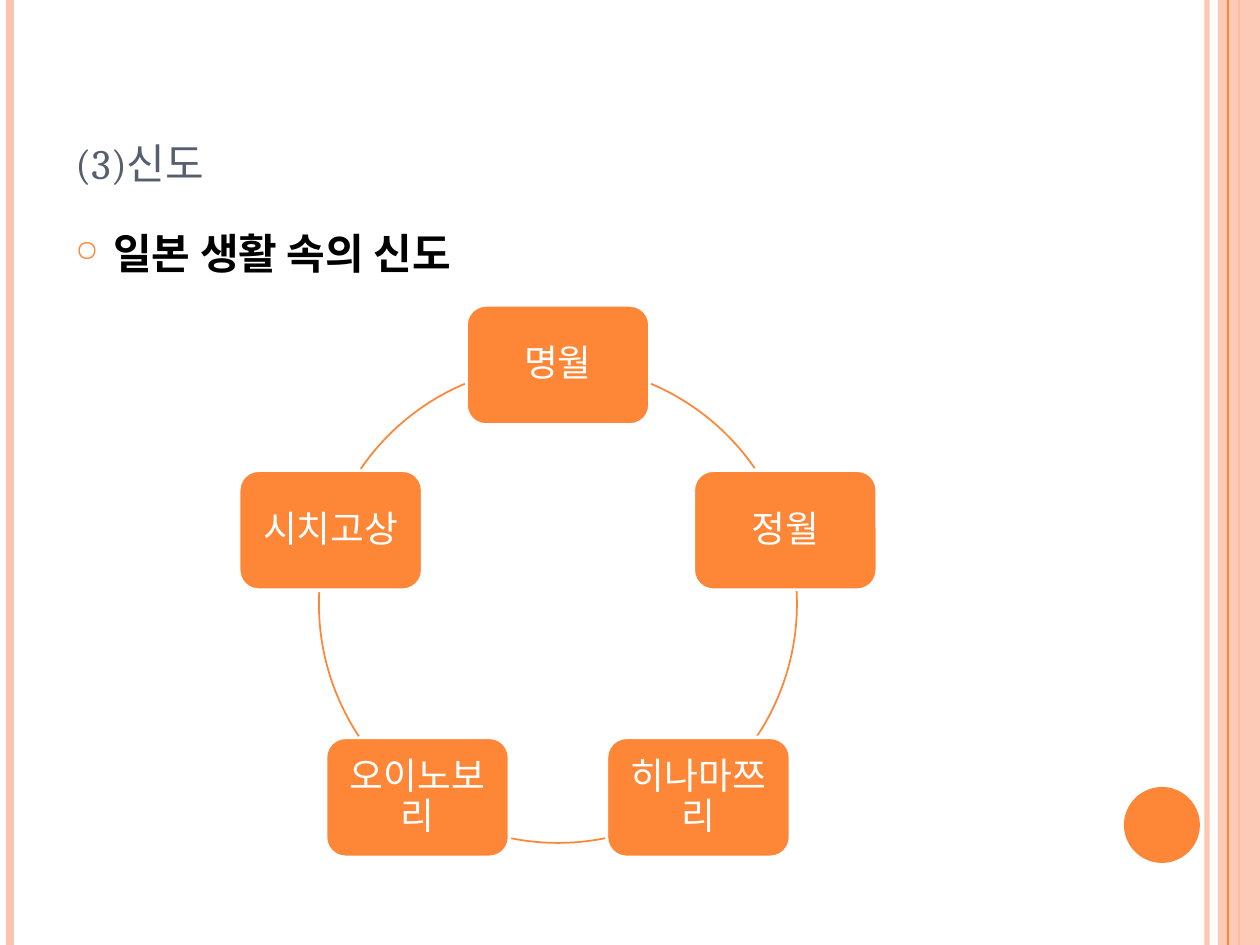
import math

from lxml import etree
from pptx import Presentation, util as u
from pptx.dml.color import RGBColor
from pptx.enum import shapes, text
from pptx.oxml import ns

PX = 914400 / 126
W, H = 1260, 945
FONT = "Cambria"
COLORS = {"orange": "FE8637", "peach": "FEC3AE", "slate": "575F6D",
          "black": "000000", "white": "FFFFFF"}
FESTIVALS = ["명월", "정월", "히나마쯔리", "오이노보리", "시치고상"]
# start and end of the arc that follows each festival, in degrees
ARCS = [(292.9, 325.6), (356.9, 33.6), (78.6, 101.4), (146.4, 183.1), (214.4, 247.1)]


def px(*values):
    return [u.Emu(round(v * PX)) for v in values]


def rgb(name):
    return RGBColor.from_string(COLORS[name])


def add_sub(parent, tag, **attrs):
    return etree.SubElement(parent, ns.qn(tag), attrs)


def set_alpha(sp, percent):
    """Make the only colour set so far on a shape or line translucent."""
    color = next(sp._element.spPr.iter(ns.qn("a:srgbClr")))
    add_sub(color, "a:alpha", val=str(percent * 1000))


def add_run(p, words, size, color, bold=False):
    r = p.add_run()
    r.text = words
    r.font.name, r.font.size, r.font.bold = FONT, u.Pt(size), bold
    r.font.color.rgb = rgb(color)
    return r


def add_shape(s, kind, box, fill=None, line=None, width=1):
    sp = s.shapes.add_shape(kind, *px(*box))
    sp.shadow.inherit = False
    if fill:
        sp.fill.solid()
        sp.fill.fore_color.rgb = rgb(fill)
    else:
        sp.fill.background()
    if line:
        sp.line.color.rgb = rgb(line)
        sp.line.width = u.Pt(width)
    else:
        sp.line.fill.background()
    return sp


def add_stripe(s, x, color, width):
    line = s.shapes.add_connector(shapes.MSO_CONNECTOR.STRAIGHT, *px(x, 0, x, H))
    line.line.color.rgb = rgb(color)
    line.line.width = u.Pt(width)
    add_sub(line._element.spPr, "a:effectLst")
    return line


def add_frame(s, w, h):
    """Stripes along both edges and the dot at the lower right."""
    set_alpha(add_stripe(s, w - 53, "peach", 3), 93)
    add_stripe(s, 10, "peach", 4.5)
    add_stripe(s, w - 21, "orange", 1.5)
    band = add_shape(s, shapes.MSO_SHAPE.RECTANGLE, (w - 42, 0, 42, h), "peach")
    set_alpha(band, 87)
    add_stripe(s, w - 32, "orange", 0.75)
    add_shape(s, shapes.MSO_SHAPE.OVAL, (w - 136, h - 158, 76, 76), "orange")


def add_text_box(s, box, anchor):
    tf = s.shapes.add_textbox(*px(*box)).text_frame
    tf.word_wrap = True
    tf.vertical_anchor = anchor
    return tf.paragraphs[0]


def add_title(s, box, words):
    p = add_text_box(s, box, text.MSO_ANCHOR.BOTTOM)
    r = add_run(p, words, 30, "slate")
    r._r.get_or_add_rPr().set("cap", "small")


def add_bullet(s, box, words):
    p = add_text_box(s, box, text.MSO_ANCHOR.TOP)
    p.space_before = u.Pt(6)
    pPr = p._p.get_or_add_pPr()
    indent = u.Inches(0.3)
    pPr.set("marL", str(indent))
    pPr.set("indent", str(-indent))
    add_sub(add_sub(pPr, "a:buClr"), "a:srgbClr", val=COLORS["orange"])
    add_sub(pPr, "a:buSzPct", val="70000")
    add_sub(pPr, "a:buChar", char="○")
    add_run(p, words, 24, "black", bold=True)


def add_node(s, box, words):
    sp = add_shape(s, shapes.MSO_SHAPE.ROUNDED_RECTANGLE, box, "orange", "white", 2)
    tf = sp.text_frame
    tf.word_wrap = True
    tf.vertical_anchor = text.MSO_ANCHOR.MIDDLE
    tf.margin_left, tf.margin_right, tf.margin_top, tf.margin_bottom = px(8, 8, 8, 8)
    p = tf.paragraphs[0]
    p.alignment = text.PP_ALIGN.CENTER
    p.line_spacing = 0.9
    add_run(p, words, 21, "white")


def add_cycle(s, box, labels, node=(184, 120)):
    """Nodes spaced evenly on the circle that fills the box, joined by arcs."""
    x, y, size, _ = box
    radius = size / 2
    w, h = node
    for i, (label, (start, end)) in enumerate(zip(labels, ARCS)):
        angle = math.radians(360 / len(labels) * i - 90)
        left = x + radius * (1 + math.cos(angle)) - w / 2
        top = y + radius * (1 + math.sin(angle)) - h / 2
        add_node(s, (left, top, w, h), label)
        arc = add_shape(s, shapes.MSO_SHAPE.ARC, box, line="orange")
        # angles are stored in 1/60000 degree, adjustments in 1/100000
        arc.adjustments[0] = start * 0.6
        arc.adjustments[1] = end * 0.6


def main():
    prs = Presentation()
    prs.slide_width, prs.slide_height = px(W, H)
    s = prs.slides.add_slide(prs.slide_layouts[6])
    add_frame(s, W, H)
    add_title(s, (63, 38, 1029, 158), "(3)신도")
    add_bullet(s, (63, 221, 1029, 671), "일본 생활 속의 신도")
    add_cycle(s, (319, 365, 478, 478), FESTIVALS)
    prs.save("out.pptx")


if __name__ == "__main__":
    main()
